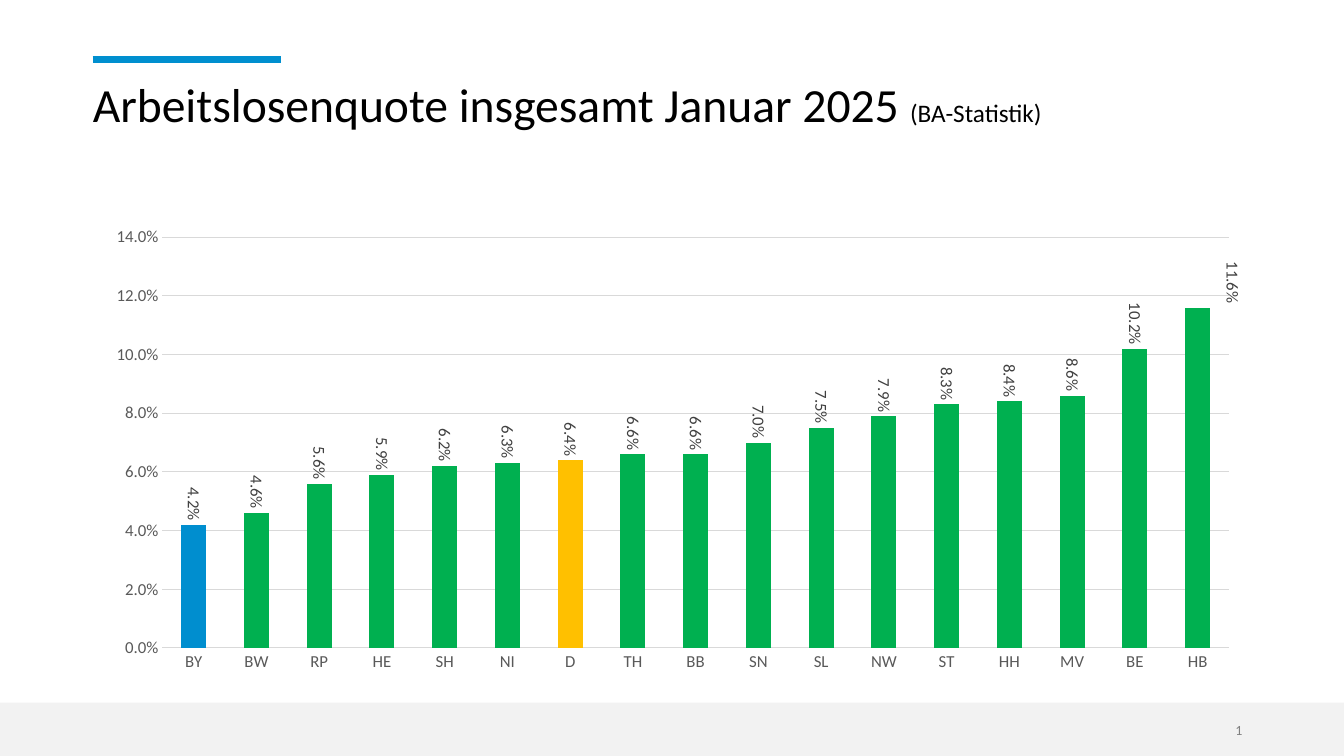
"""Build the slide on unemployment rates by German state, January 2025."""
from lxml import etree
from pptx import Presentation
from pptx.chart.data import CategoryChartData
from pptx.dml.color import RGBColor
from pptx.enum.chart import XL_CHART_TYPE, XL_LABEL_POSITION, XL_TICK_MARK
from pptx.enum.shapes import MSO_CONNECTOR, MSO_SHAPE
from pptx.enum.text import MSO_ANCHOR, MSO_AUTO_SIZE, PP_ALIGN
from pptx.oxml import parse_xml
from pptx.oxml.ns import qn
from pptx.util import Inches, Pt

COLUMN = XL_CHART_TYPE.COLUMN_CLUSTERED
OUTSIDE_END = XL_LABEL_POSITION.OUTSIDE_END
NO_TICK = XL_TICK_MARK.NONE
STRAIGHT = MSO_CONNECTOR.STRAIGHT
RECTANGLE = MSO_SHAPE.RECTANGLE
TOP, MIDDLE = MSO_ANCHOR.TOP, MSO_ANCHOR.MIDDLE
NO_AUTOFIT = MSO_AUTO_SIZE.NONE
LEFT, RIGHT = PP_ALIGN.LEFT, PP_ALIGN.RIGHT

BLACK = RGBColor(0x00, 0x00, 0x00)
LABEL_GREY = RGBColor(0x40, 0x40, 0x40)
AXIS_GREY = RGBColor(0x59, 0x59, 0x59)
NUMBER_GREY = RGBColor(0x80, 0x80, 0x80)
GRID_GREY = RGBColor(0xD9, 0xD9, 0xD9)
FOOTER_GREY = RGBColor(0xF2, 0xF2, 0xF2)
ACCENT_BLUE = RGBColor(0x00, 0x8F, 0xCF)
BAVARIA_BLUE = RGBColor(0x00, 0x8E, 0xCF)
GERMANY_YELLOW = RGBColor(0xFF, 0xC0, 0x00)
STATE_GREEN = RGBColor(0x00, 0xB0, 0x50)

FONT = "Calibri"
PERCENT = "0.0%"
CHART_NS = "http://schemas.openxmlformats.org/drawingml/2006/chart"
RATES = {
    "BY": 0.042, "BW": 0.046, "RP": 0.056, "HE": 0.059, "SH": 0.062, "NI": 0.063,
    "D": 0.064, "TH": 0.066, "BB": 0.066, "SN": 0.07, "SL": 0.075, "NW": 0.079,
    "ST": 0.083, "HH": 0.084, "MV": 0.086, "BE": 0.102, "HB": 0.116,
}
HIGHLIGHTS = {"BY": BAVARIA_BLUE, "D": GERMANY_YELLOW}


def style_font(font, size, color):
    font.name = FONT
    font.size = Pt(size)
    font.bold = False
    font.color.rgb = color


def manual_layout(**settings):
    items = "".join(f'<c:{key} val="{value}"/>' for key, value in settings.items())
    return parse_xml(
        f'<c:layout xmlns:c="{CHART_NS}"><c:manualLayout>{items}</c:manualLayout></c:layout>'
    )


prs = Presentation()
prs.slide_width, prs.slide_height = Inches(13.33), Inches(7.5)
s = prs.slides.add_slide(prs.slide_layouts[5])

footer = s.shapes.add_shape(RECTANGLE, 0, Inches(6.97), prs.slide_width, Inches(0.53))
footer.shadow.inherit = False
footer.fill.solid()
footer.fill.fore_color.rgb = FOOTER_GREY
footer.line.fill.background()

accent = s.shapes.add_connector(STRAIGHT, Inches(0.92), Inches(0.59), Inches(2.79), Inches(0.59))
accent.line.color.rgb = ACCENT_BLUE
accent.line.width = Pt(5)
etree.SubElement(accent.element.spPr, qn("a:effectLst"))

title = s.shapes.title
title.left, title.top = Inches(0.92), Inches(0.76)
title.width, title.height = Inches(11.5), Inches(0.72)
tf = title.text_frame
tf.auto_size = NO_AUTOFIT
tf.vertical_anchor = TOP
tf.margin_left = 0
p = tf.paragraphs[0]
p.alignment = LEFT
p.line_spacing = 0.9
for text, size in [("Arbeitslosenquote insgesamt Januar 2025 ", 34), ("(BA-Statistik)", 18)]:
    r = p.add_run()
    r.text = text
    style_font(r.font, size, BLACK)

number = s.shapes.add_textbox(Inches(9.42), Inches(7.04), Inches(3), Inches(0.4))
tf = number.text_frame
tf.word_wrap = True
tf.vertical_anchor = MIDDLE
p = tf.paragraphs[0]
p.alignment = RIGHT
r = p.add_run()
r.text = "1"
style_font(r.font, 10, NUMBER_GREY)

data = CategoryChartData(number_format=PERCENT)
data.categories = list(RATES)
data.add_series("Series 1", list(RATES.values()))
chart = s.shapes.add_chart(
    COLUMN, Inches(0.92), Inches(2.17), Inches(11.5), Inches(4.58), data
).chart
chart.has_title = False
chart.has_legend = False
style_font(chart.font, 10, BLACK)

for axis in (chart.category_axis, chart.value_axis):
    axis.major_tick_mark = axis.minor_tick_mark = NO_TICK
    axis.format.line.fill.background()
    style_font(axis.tick_labels.font, 12, AXIS_GREY)

rate_axis = chart.value_axis
rate_axis.minimum_scale, rate_axis.maximum_scale = 0, 0.14
rate_axis.major_unit = 0.02
rate_axis.tick_labels.number_format = PERCENT
rate_axis.tick_labels.number_format_is_linked = False
grid = rate_axis.major_gridlines.format.line
grid.color.rgb = GRID_GREY
grid.width = Pt(0.75)

plot = chart.plots[0]
plot.gap_width = 150
plot.vary_by_categories = False
series = plot.series[0]
series.format.fill.solid()
series.format.fill.fore_color.rgb = STATE_GREEN
for state, color in HIGHLIGHTS.items():
    fill = series.points[list(RATES).index(state)].format.fill
    fill.solid()
    fill.fore_color.rgb = color

labels = series.data_labels
labels.show_value = True
labels.number_format = PERCENT
labels.number_format_is_linked = False
last_label = series.points[len(RATES) - 1].data_label
for label in (labels, last_label):
    label.position = OUTSIDE_END
    style_font(label.font, 12, LABEL_GREY)

chart_xml = chart.element
for body in chart_xml.xpath(".//c:dLbls//a:bodyPr"):
    body.set("rot", "5400000")
    body.set("vert", "horz")
for leader_lines in chart_xml.xpath(".//c:dLbls/c:showLeaderLines"):
    leader_lines.set("val", "0")
chart_xml.xpath(".//c:dLbl/c:idx")[0].addnext(manual_layout(x=0.03, y=0))

plot_area = chart_xml.xpath(".//c:plotArea")[0]
for layout in plot_area.findall(qn("c:layout")):
    plot_area.remove(layout)
plot_area.insert(0, manual_layout(
    layoutTarget="inner", xMode="edge", yMode="edge", x=0.06, y=0.04, w=0.92, h=0.89
))

prs.save("out.pptx")
